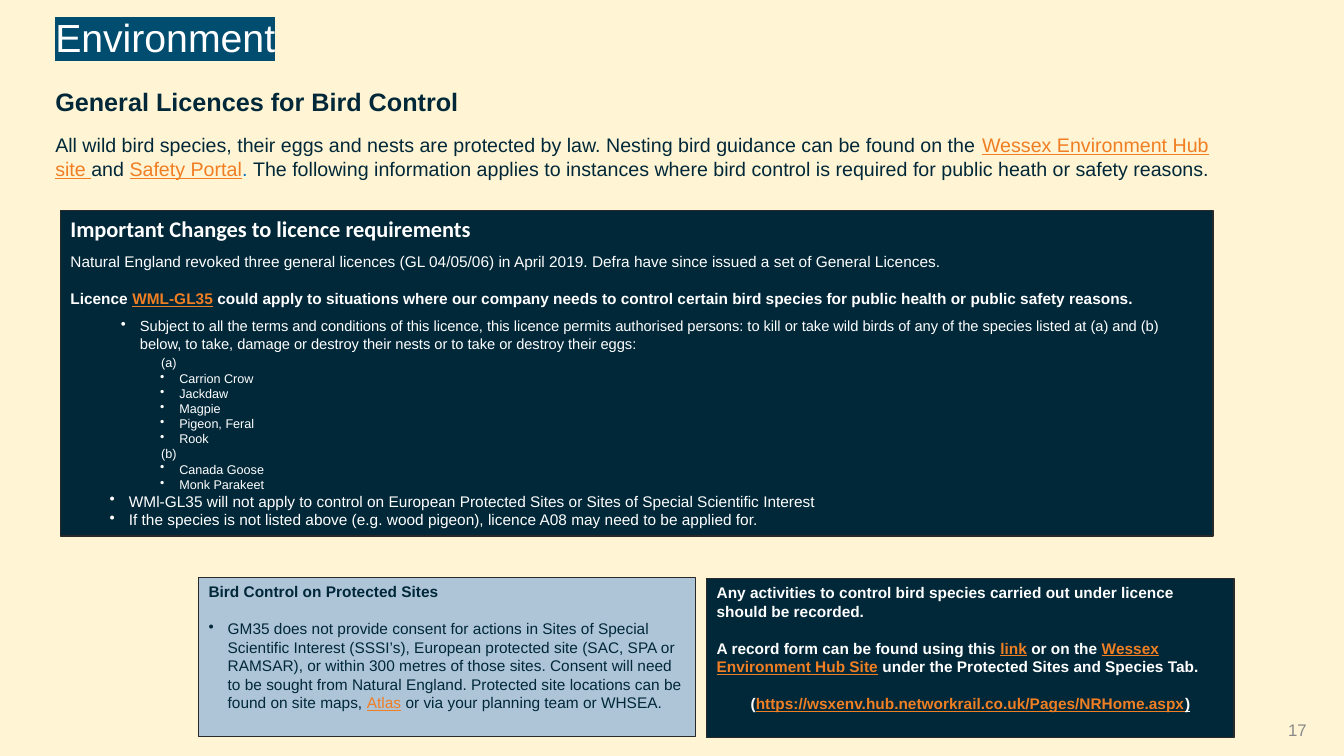
from lxml import etree
from pptx import Presentation
from pptx import util as u
from pptx.dml.color import RGBColor
from pptx.enum import shapes, text
from pptx.oxml.ns import qn

NAVY = "002839"
WHITE = "FFFFFF"
ORANGE = "F07E23"
EDGE = "292929"
STEP = 0.19


def rgb(code):
    return RGBColor.from_string(code)


def link(words):
    return words, ORANGE, True


def add_bullet(para):
    mark = etree.SubElement(para._p.get_or_add_pPr(), qn("a:buChar"))
    mark.set("char", "•")


def write(frame, rows):
    frame.word_wrap = True
    for i, row in enumerate(rows):
        para = frame.paragraphs[0] if i == 0 else frame.add_paragraph()
        para.alignment = row.get("align", text.PP_ALIGN.LEFT)
        if "gap" in row:
            para.space_before = u.Pt(row["gap"])
        left = row.get("left", 0)
        if left:
            props = para._p.get_or_add_pPr()
            props.set("marL", str(u.Inches(left)))
            props.set("indent", str(u.Inches(-STEP if row.get("bullet") else 0)))
        if row.get("bullet"):
            add_bullet(para)
        font = para.font
        font.name = row.get("face", "Arial")
        font.size = u.Pt(row["size"])
        font.bold = row.get("bold", False)
        parts = row["parts"]
        mixed = len(parts) > 1
        if not mixed:
            font.color.rgb = rgb(row["color"])
        for part in parts:
            words, color, under = (part, row["color"], False) if isinstance(part, str) else part
            run = para.add_run()
            run.text = words
            if mixed:
                run.font.color.rgb = rgb(color)
                run.font.underline = under


def line(*parts, size=11, color=WHITE, **more):
    return dict(parts=parts, size=size, color=color, **more)


def add_label(slide, box, rows, middle=False):
    label = slide.shapes.add_textbox(*map(u.Inches, box))
    write(label.text_frame, rows)
    if middle:
        label.text_frame.vertical_anchor = text.MSO_ANCHOR.MIDDLE
    return label


def add_panel(slide, box, fill, rows, width=0.75):
    panel = slide.shapes.add_shape(shapes.MSO_SHAPE.RECTANGLE, *map(u.Inches, box))
    panel.shadow.inherit = False
    panel.fill.solid()
    panel.fill.fore_color.rgb = rgb(fill)
    panel.line.color.rgb = rgb(EDGE)
    panel.line.width = u.Pt(width)
    panel.text_frame.vertical_anchor = text.MSO_ANCHOR.TOP
    write(panel.text_frame, rows)


def add_title(slide, box):
    label = add_label(slide, box, [line("Environment", size=28)], middle=True)
    font = label.text_frame.paragraphs[0].runs[0].font
    font.color.rgb = rgb(WHITE)
    light = etree.Element(qn("a:highlight"))
    etree.SubElement(light, qn("a:srgbClr")).set("val", "004D6F")
    font._element.find(qn("a:solidFill")).addnext(light)


def add_intro(slide, box):
    x, y, w, h = box
    add_label(slide, (x, y, 4.31, 0.4),
              [line("General Licences for Bird Control", size=18, color=NAVY, bold=True)])
    add_label(slide, (x, y + 0.46, w, h - 0.46), [line(
        "All wild bird species, their eggs and nests are protected by law. "
        "Nesting bird guidance can be found on the ",
        link("Wessex Environment Hub site "), "and ", link("Safety Portal"),
        (". ", "0070C0", False),
        "The following information applies to instances where bird control is "
        "required for public heath or safety reasons.", size=14, color=NAVY)])


def add_changes(slide, box):
    def birds(*names):
        return [line(name, size=9, left=1.08, bullet=True) for name in names]

    rows = [
        line("Important Changes to licence requirements", size=16, face="Calibri", bold=True),
        line("Natural England revoked three general licences (GL 04/05/06) in April 2019. "
             "Defra have since issued a set of General Licences.", gap=7),
        line("Licence ", link("WML-GL35"),
             " could apply to situations where our company needs to control certain bird "
             "species for public health or public safety reasons.", bold=True, gap=13),
        line("Subject to all the terms and conditions of this licence, this licence permits "
             "authorised persons: to kill or take wild birds of any of the species listed at "
             "(a) and (b) below, to take, damage or destroy their nests or to take or destroy "
             "their eggs:", size=10.5, left=0.69, bullet=True, gap=7),
        line("(a)", size=9, left=0.9, gap=2),
        *birds("Carrion Crow", "Jackdaw", "Magpie", "Pigeon, Feral", "Rook"),
        line("(b)", size=9, left=0.9),
        *birds("Canada Goose", "Monk Parakeet"),
        line("WMl-GL35 will not apply to control on European Protected Sites or Sites of "
             "Special Scientific Interest", left=0.58, bullet=True),
        line("If the species is not listed above (e.g. wood pigeon), licence A08 may need to "
             "be applied for.", left=0.58, bullet=True),
    ]
    add_panel(slide, box, NAVY, rows, width=1)


def add_sites(slide, box):
    add_panel(slide, box, "AEC4D7", [
        line("Bird Control on Protected Sites", color=NAVY, bold=True),
        line("GM35 does not provide consent for actions in Sites of Special Scientific "
             "Interest (SSSI’s), European protected site (SAC, SPA or RAMSAR), or within 300 "
             "metres of those sites. Consent will need to be sought from Natural England. "
             "Protected site locations can be found on site maps, ", link("Atlas"),
             " or via your planning team or WHSEA.",
             color=NAVY, left=STEP, bullet=True, gap=13),
    ])


def add_records(slide, box):
    add_panel(slide, box, NAVY, [
        line("Any activities to control bird species carried out under licence should be "
             "recorded.", bold=True),
        line("A record form can be found using this ", link("link"), " or on the ",
             link("Wessex Environment Hub Site"),
             " under the Protected Sites and Species Tab.", bold=True, gap=13),
        line("(", link("https://wsxenv.hub.networkrail.co.uk/Pages/NRHome.aspx"),
             (")", WHITE, True), bold=True, gap=13, align=text.PP_ALIGN.CENTER),
    ])


def main():
    deck = Presentation()
    deck.slide_width = u.Inches(13.33)
    deck.slide_height = u.Inches(7.5)
    slide = deck.slides.add_slide(deck.slide_layouts[6])
    slide.background.fill.solid()
    slide.background.fill.fore_color.rgb = rgb("FFF4D4")
    add_label(slide, (12.13, 7.14, 0.93, 0.2),
              [line("17", size=12, color="898989", align=text.PP_ALIGN.RIGHT)], middle=True)
    add_title(slide, (0.45, -0.06, 2.9, 0.85))
    add_intro(slide, (0.45, 0.81, 11.9, 1.03))
    add_changes(slide, (0.6, 2.09, 11.43, 3.23))
    add_sites(slide, (1.97, 5.73, 4.93, 1.58))
    add_records(slide, (7.01, 5.74, 5.23, 1.58))
    deck.save("out.pptx")


if __name__ == "__main__":
    main()
